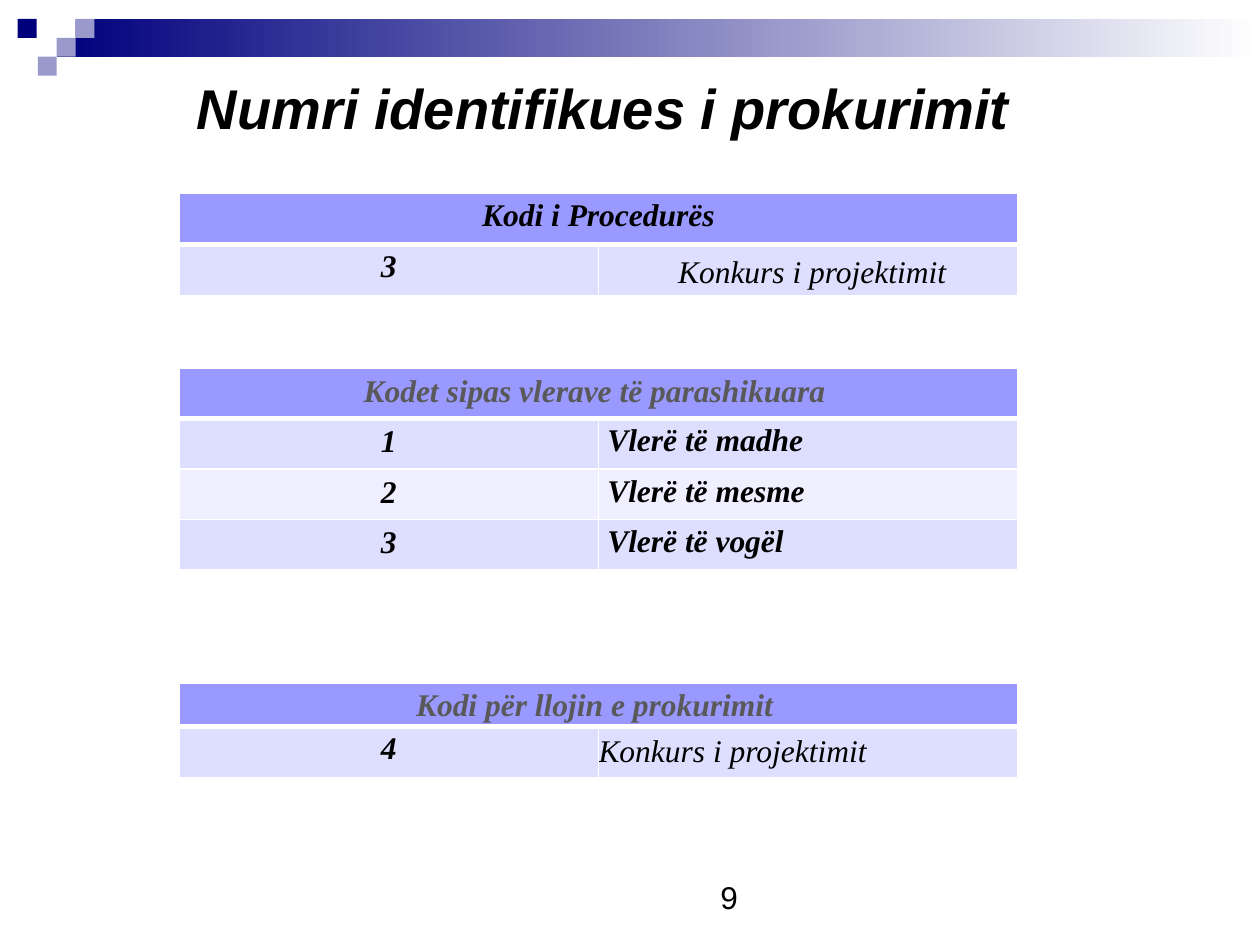
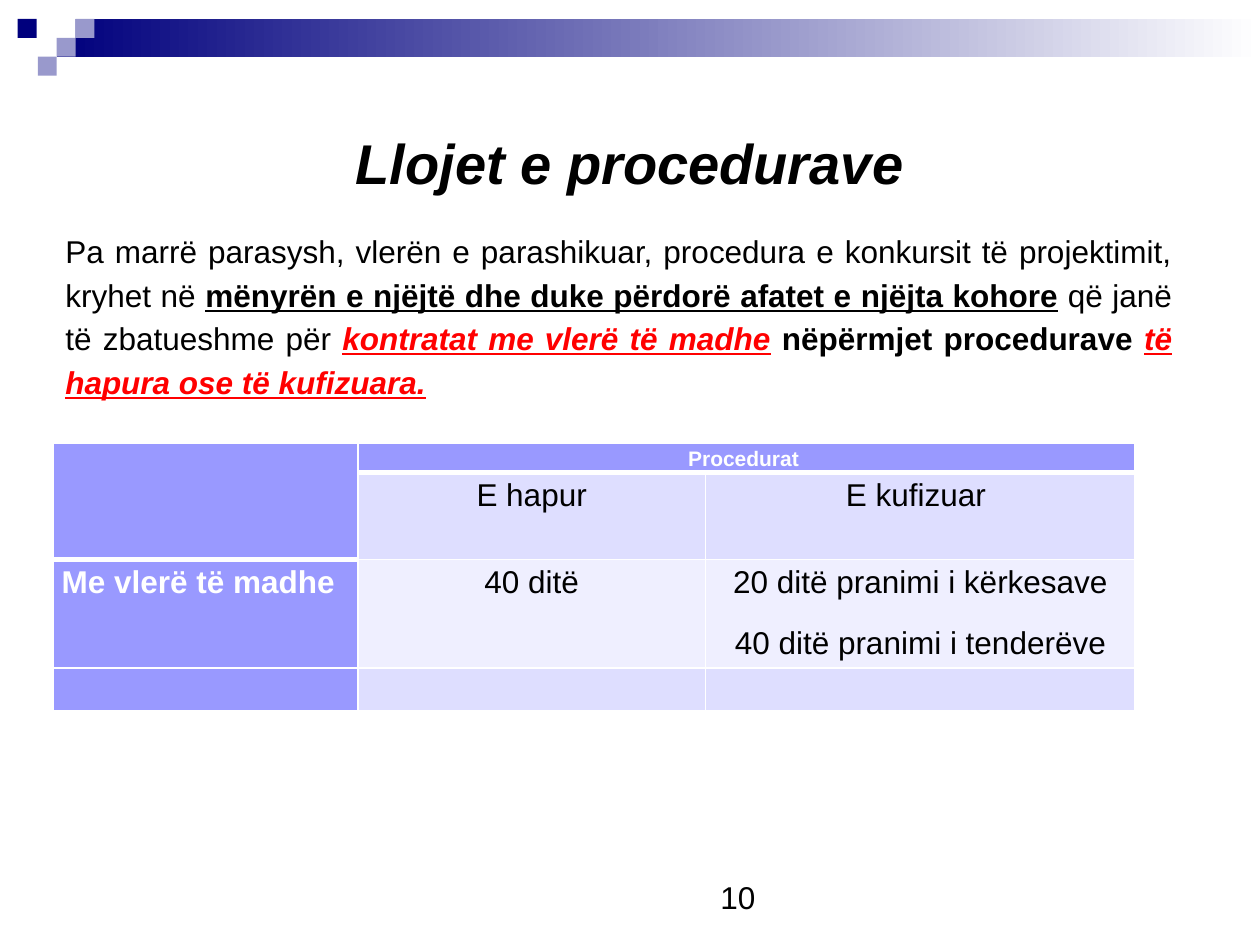
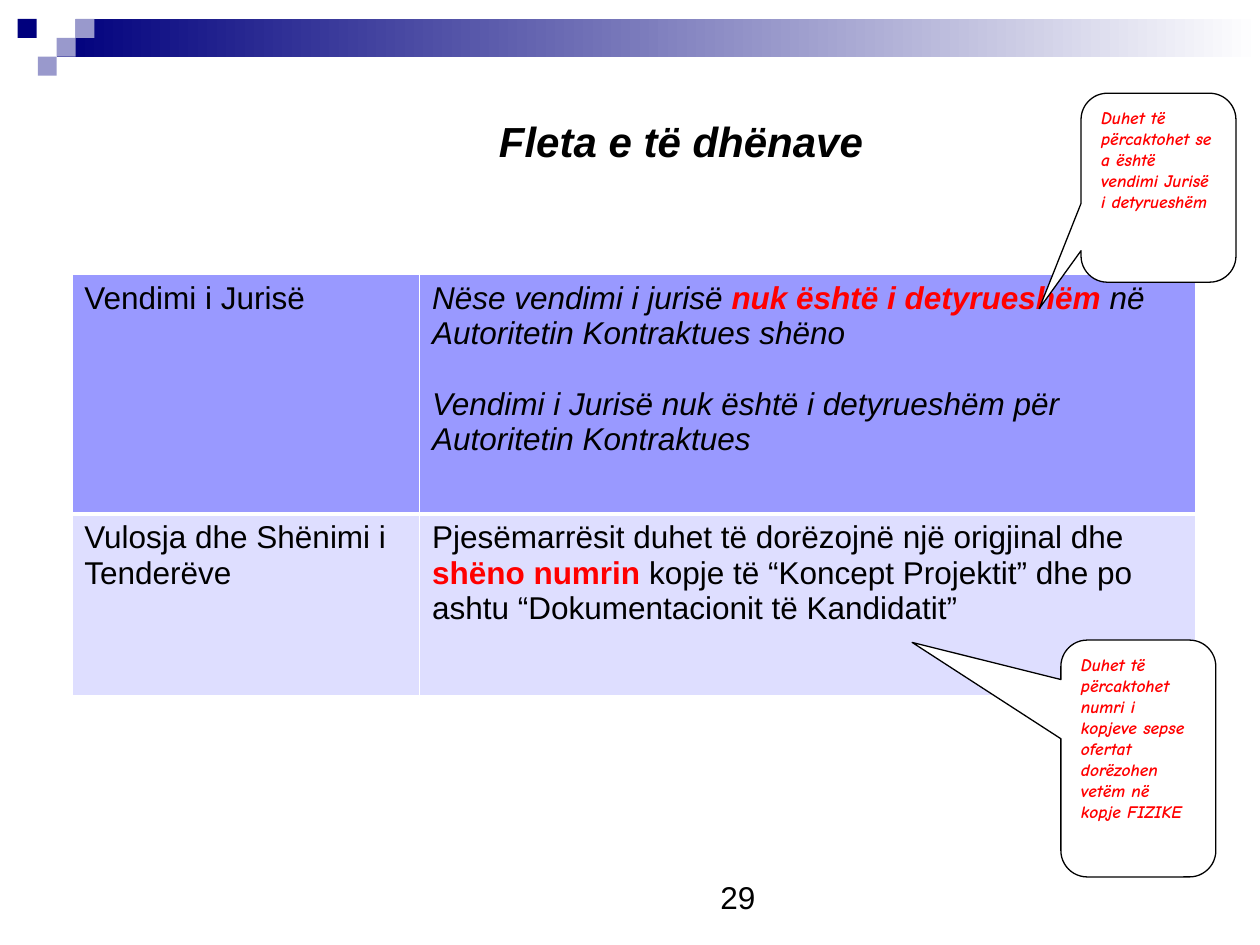
from dataclasses import dataclass
from typing import Any, NamedTuple

from pptx import Presentation
from pptx.dml import color as dml
from pptx.enum import shapes, text
from pptx.oxml import ns, parse_xml
from pptx.util import Inches, Pt

COLORS = {
    "navy": "00007D",
    "lavender": "9999CC",
    "header": "9999FF",
    "band": "DEDEFF",
    "pale": "EFEFFF",
    "white": "FFFFFF",
    "black": "000000",
    "grey": "595959",
    "red": "FF0000",
}
LEFT, CENTER, JUSTIFY = text.PP_ALIGN.LEFT, text.PP_ALIGN.CENTER, text.PP_ALIGN.JUSTIFY
TOP, MIDDLE = text.MSO_ANCHOR.TOP, text.MSO_ANCHOR.MIDDLE

BODY = {"name": "Arial", "size": Pt(18), "color": "black"}
BODY_BOLD = BODY | {"bold": True}
BODY_ITALIC = BODY | {"italic": True}
UNDERLINED = BODY_BOLD | {"underline": True}
RED_BOLD = BODY_BOLD | {"color": "red"}
RED_LINK = RED_BOLD | {"italic": True, "underline": True}
ROW_LABEL = BODY_BOLD | {"color": "white"}
SMALL_HEADER = ROW_LABEL | {"size": Pt(12)}
TITLE = BODY_BOLD | {"size": Pt(32), "italic": True}
SMALL_TITLE = TITLE | {"size": Pt(24)}
SERIF = BODY_ITALIC | {"name": "Times New Roman"}
SERIF_BOLD = SERIF | {"bold": True}
SERIF_GREY = SERIF_BOLD | {"color": "grey"}
NOTE = RED_BOLD | {"name": "Comic Neue", "size": Pt(10), "italic": True}

ROOMY = (0.1, 0.05)
TIGHT = (0.07, 0)
FLUSH = (0, 0)


class Box(NamedTuple):
    left: float
    top: float
    width: float
    height: float

    def lengths(self) -> list[int]:
        return [Inches(value) for value in self]


class Span(NamedTuple):
    words: str
    style: dict[str, Any]


@dataclass
class Block:
    paragraphs: list[list[Span]]
    align: Any = LEFT
    line_spacing: float = 1.0
    gap: float = 0


@dataclass
class Cell:
    fill: str
    block: Block | None = None
    margins: tuple[float, float] = TIGHT
    anchor: Any = TOP
    rows: int = 1
    columns: int = 1
    thick_bottom: bool = False


@dataclass
class Grid:
    left: float
    top: float
    columns: list[float]
    rows: list[float]
    cells: list[list[Cell | None]]


@dataclass
class Callout:
    box: Box
    adjustments: tuple[float, float, float]
    words: str


SQUARE = 0.15
SQUARES = [
    (0.45, 0.15, "white"),
    (0.6, 0.15, "lavender"),
    (0.14, 0.15, "navy"),
    (0.45, 0.3, "lavender"),
    (0.3, 0.45, "lavender"),
]


def rgb(name: str) -> dml.RGBColor:
    return dml.RGBColor.from_string(COLORS[name])


def line(words: str, style: dict[str, Any], align: Any = CENTER, line_spacing: float = 1.15) -> Block:
    return Block([[Span(words, style)]], align, line_spacing)


def write(frame: Any, block: Block) -> None:
    frame.word_wrap = True
    for index, spans in enumerate(block.paragraphs):
        paragraph = frame.add_paragraph() if index else frame.paragraphs[0]
        paragraph.alignment = block.align
        paragraph.line_spacing = block.line_spacing
        paragraph.space_before = Pt(block.gap if index else 0)
        for span in spans:
            run = paragraph.add_run()
            run.text = span.words
            for attribute, value in span.style.items():
                if attribute == "color":
                    run.font.color.rgb = rgb(value)
                else:
                    setattr(run.font, attribute, value)


def add_shape(slide: Any, kind: Any, box: Box, fill: str) -> Any:
    shape = slide.shapes.add_shape(kind, *box.lengths())
    shape.shadow.inherit = False
    shape.fill.solid()
    shape.fill.fore_color.rgb = rgb(fill)
    shape.line.fill.background()
    return shape


def add_text(slide: Any, box: Box, block: Block) -> Any:
    shape = slide.shapes.add_textbox(*box.lengths())
    write(shape.text_frame, block)
    return shape


def add_banner(slide: Any) -> None:
    banner = add_shape(slide, shapes.MSO_SHAPE.RECTANGLE, Box(0.45, 0.15, 9.55, 0.3), "navy")
    banner.fill.gradient()
    banner.fill.gradient_angle = 0
    for stop, name, position in zip(banner.fill.gradient_stops, ("navy", "white"), (0, 1)):
        stop.color.rgb = rgb(name)
        stop.position = position
    for left, top, fill in SQUARES:
        add_shape(slide, shapes.MSO_SHAPE.RECTANGLE, Box(left, top, SQUARE, SQUARE), fill)


def start_slide(presentation: Any, title: str, box: Box, style: dict[str, Any], number: int) -> Any:
    slide = presentation.slides.add_slide(presentation.slide_layouts[5])
    add_banner(slide)
    heading = slide.shapes.title
    heading.left, heading.top, heading.width, heading.height = box.lengths()
    heading.text_frame.vertical_anchor = MIDDLE
    heading.text_frame.auto_size = text.MSO_AUTO_SIZE.NONE
    write(heading.text_frame, line(title, style, line_spacing=1.0))
    add_text(slide, Box(5.62, 6.92, 0.64, 0.4), line(str(number), BODY, LEFT, 1.0))
    return slide


def border_cell(cell: Any, first_row: bool, thick_bottom: bool) -> None:
    widths = {"lnL": 1, "lnR": 1}
    if first_row:
        widths["lnT"] = 1
    widths["lnB"] = 3 if thick_bottom else 1
    properties = cell._tc.get_or_add_tcPr()
    for position, (tag, width) in enumerate(widths.items()):
        properties.insert(position, parse_xml(
            f'<a:{tag} {ns.nsdecls("a")} w="{Pt(width)}"><a:solidFill>'
            f'<a:srgbClr val="{COLORS["white"]}"/></a:solidFill></a:{tag}>'))


def add_grid(slide: Any, grid: Grid) -> None:
    box = Box(grid.left, grid.top, sum(grid.columns), sum(grid.rows))
    table = slide.shapes.add_table(len(grid.rows), len(grid.columns), *box.lengths()).table
    table.first_row = table.horz_banding = False
    for column, width in zip(table.columns, grid.columns):
        column.width = Inches(width)
    for row, height in zip(table.rows, grid.rows):
        row.height = Inches(height)
    for row_index, entries in enumerate(grid.cells):
        for column_index, entry in enumerate(entries):
            if entry is None:
                continue
            cell = table.cell(row_index, column_index)
            if entry.rows > 1 or entry.columns > 1:
                cell.merge(table.cell(row_index + entry.rows - 1, column_index + entry.columns - 1))
            cell.fill.solid()
            cell.fill.fore_color.rgb = rgb(entry.fill)
            cell.margin_left = cell.margin_right = Inches(entry.margins[0])
            cell.margin_top = cell.margin_bottom = Inches(entry.margins[1])
            cell.vertical_anchor = entry.anchor
            border_cell(cell, row_index == 0, entry.thick_bottom)
            if entry.block:
                write(cell.text_frame, entry.block)


def add_callout(slide: Any, callout: Callout) -> None:
    shape = add_shape(slide, shapes.MSO_SHAPE.ROUNDED_RECTANGULAR_CALLOUT, callout.box, "white")
    shape.line.color.rgb = rgb("black")
    shape.line.width = Pt(0.75)
    for index, value in enumerate(callout.adjustments):
        shape.adjustments[index] = value
    shape.text_frame.vertical_anchor = TOP
    write(shape.text_frame, line(callout.words, NOTE, LEFT, 1.0))


def code_grid(top: float, heights: list[float], header: Cell, rows: list[list[Cell | None]]) -> Grid:
    header.columns, header.thick_bottom = 2, True
    return Grid(1.42, top, [3.33, 3.33], heights, [[header, None], *rows])


def build_codes(presentation: Any) -> None:
    slide = start_slide(presentation, "Numri identifikues i prokurimit", Box(0.5, 0.53, 8.58, 0.64), TITLE, 9)
    add_grid(slide, code_grid(1.53, [0.41, 0.41], Cell("header", line("Kodi i Procedurës", SERIF_BOLD)), [[
        Cell("band", line("3", SERIF_BOLD)),
        Cell("band", line(" Konkurs i projektimit", SERIF), FLUSH, MIDDLE),
    ]]))
    values = ["Vlerë të madhe", "Vlerë të mesme", "Vlerë të vogël"]
    value_rows = []
    for code, value in enumerate(values, 1):
        fill = "band" if code % 2 else "pale"
        value_rows.append([
            Cell(fill, line(str(code), SERIF_BOLD, line_spacing=1.0), ROOMY),
            Cell(fill, line(value, SERIF_BOLD, JUSTIFY)),
        ])
    value_header = line("Kodet sipas vlerave të parashikuara ", SERIF_GREY, line_spacing=1.0)
    add_grid(slide, code_grid(2.92, [0.4] * 4, Cell("header", value_header, ROOMY), value_rows))
    kind_header = line("Kodi për llojin e prokurimit ", SERIF_GREY)
    add_grid(slide, code_grid(5.42, [0.33, 0.41], Cell("header", kind_header), [[
        Cell("band", line("4", SERIF_BOLD)),
        Cell("band", line("Konkurs i projektimit", SERIF, LEFT, 1.0), FLUSH, MIDDLE),
    ]]))


def build_procedures(presentation: Any) -> None:
    slide = start_slide(presentation, "Llojet e procedurave", Box(0.51, 0.97, 8.98, 0.64), TITLE, 10)
    add_text(slide, Box(0.42, 1.75, 8.98, 1.6), Block([[
        Span("Pa marrë parasysh, vlerën e parashikuar, procedura e konkursit të projektimit, kryhet në ", BODY),
        Span("mënyrën e njëjtë dhe duke përdorë afatet e njëjta kohore", UNDERLINED),
        Span(" që janë të zbatueshme për ", BODY),
        Span("kontratat me vlerë të madhe", RED_LINK),
        Span(" nëpërmjet procedurave ", BODY_BOLD),
        Span("të hapura ose të kufizuara.", RED_LINK),
    ]], JUSTIFY, 1.15))
    deadlines = Block([
        [Span("20 ditë pranimi i kërkesave", BODY)],
        [Span("40 ditë pranimi i tenderëve", BODY)],
    ], CENTER, 1.15, 12)
    add_grid(slide, Grid(0.42, 3.52, [2.42, 2.76, 3.41], [0.22, 0.69, 0.86, 0.34], [
        [Cell("header", rows=2, thick_bottom=True),
         Cell("header", line("Procedurat ", SMALL_HEADER), columns=2, thick_bottom=True), None],
        [None, Cell("band", line("E hapur", BODY)), Cell("band", line("E kufizuar ", BODY))],
        [Cell("header", line("Me vlerë të madhe", ROW_LABEL, JUSTIFY)),
         Cell("pale", line("40 ditë", BODY)), Cell("pale", deadlines)],
        [Cell("header"), Cell("band"), Cell("band")],
    ]))


def build_data_sheet(presentation: Any) -> None:
    slide = start_slide(presentation, "Fleta e të dhënave", Box(2.9, 0.83, 5.01, 0.58), SMALL_TITLE, 29)
    decision = Block([
        [Span("Nëse vendimi i jurisë ", BODY_ITALIC),
         Span("nuk është i detyrueshëm", RED_BOLD | {"italic": True}),
         Span(" në Autoritetin Kontraktues shëno", BODY_ITALIC)],
        [Span("Vendimi i Jurisë nuk është i detyrueshëm për Autoritetin Kontraktues", BODY_ITALIC)],
    ], gap=20)
    copies = Block([[
        Span("Pjesëmarrësit duhet të dorëzojnë një origjinal dhe ", BODY),
        Span("shëno numrin ", RED_BOLD),
        Span("kopje të “Koncept Projektit” dhe po ashtu “Dokumentacionit të Kandidatit”", BODY),
    ]])
    add_grid(slide, Grid(0.57, 2.18, [2.76, 6.16], [1.9, 1.44], [
        [Cell("header", line("Vendimi i Jurisë", BODY, LEFT, 1.0), ROOMY, thick_bottom=True),
         Cell("header", decision, ROOMY, thick_bottom=True)],
        [Cell("band", line("Vulosja dhe Shënimi i Tenderëve", BODY, LEFT, 1.0), ROOMY),
         Cell("band", copies, ROOMY)],
    ]))
    callouts = [
        Callout(Box(8.42, 5.08, 1.23, 1.88), (-1.46, -0.49, 0.17),
                "Duhet të përcaktohet numri i kopjeve sepse ofertat dorëzohen vetëm në kopje FIZIKE"),
        Callout(Box(8.58, 0.74, 1.23, 1.5), (-0.77, 0.64, 0.17),
                "Duhet të përcaktohet se a është vendimi Jurisë i detyrueshëm"),
    ]
    for callout in callouts:
        add_callout(slide, callout)


def main() -> None:
    presentation = Presentation()
    presentation.slide_width, presentation.slide_height = Inches(10), Inches(7.5)
    for build in (build_codes, build_procedures, build_data_sheet):
        build(presentation)
    presentation.save("out.pptx")


if __name__ == "__main__":
    main()
